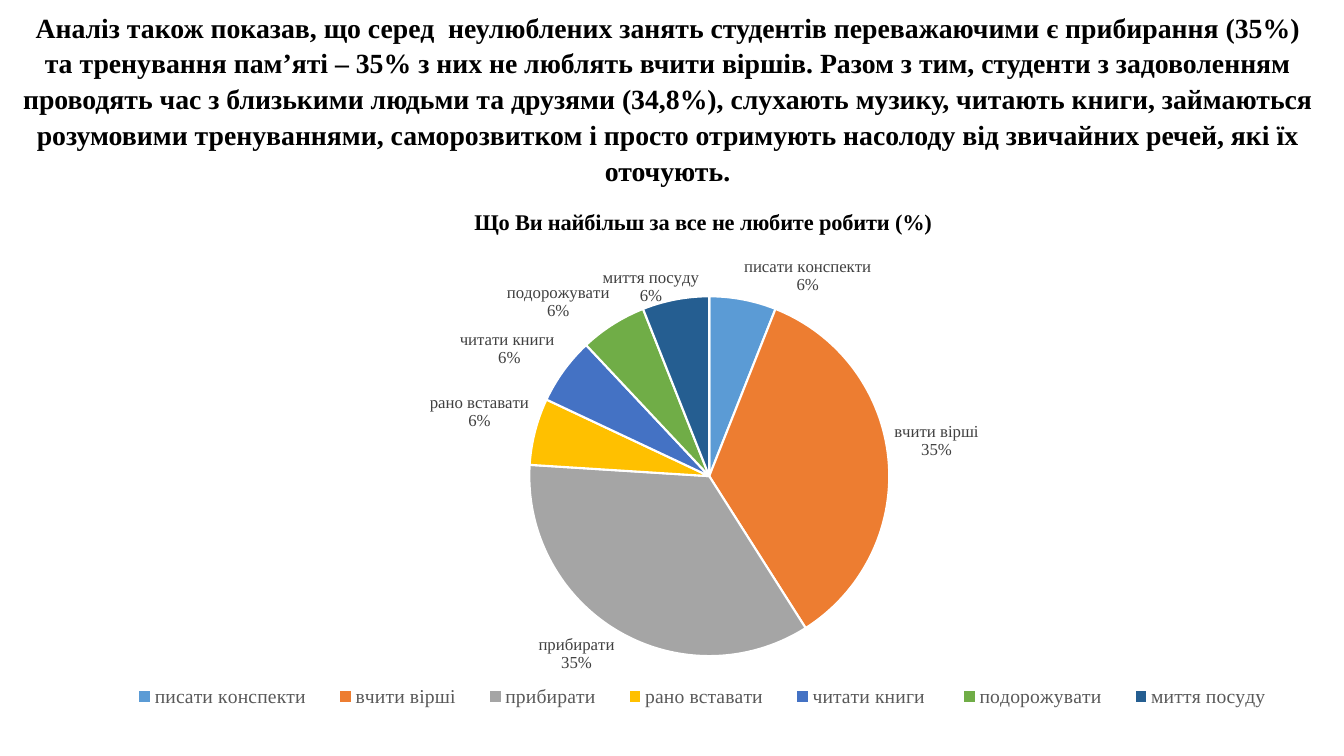
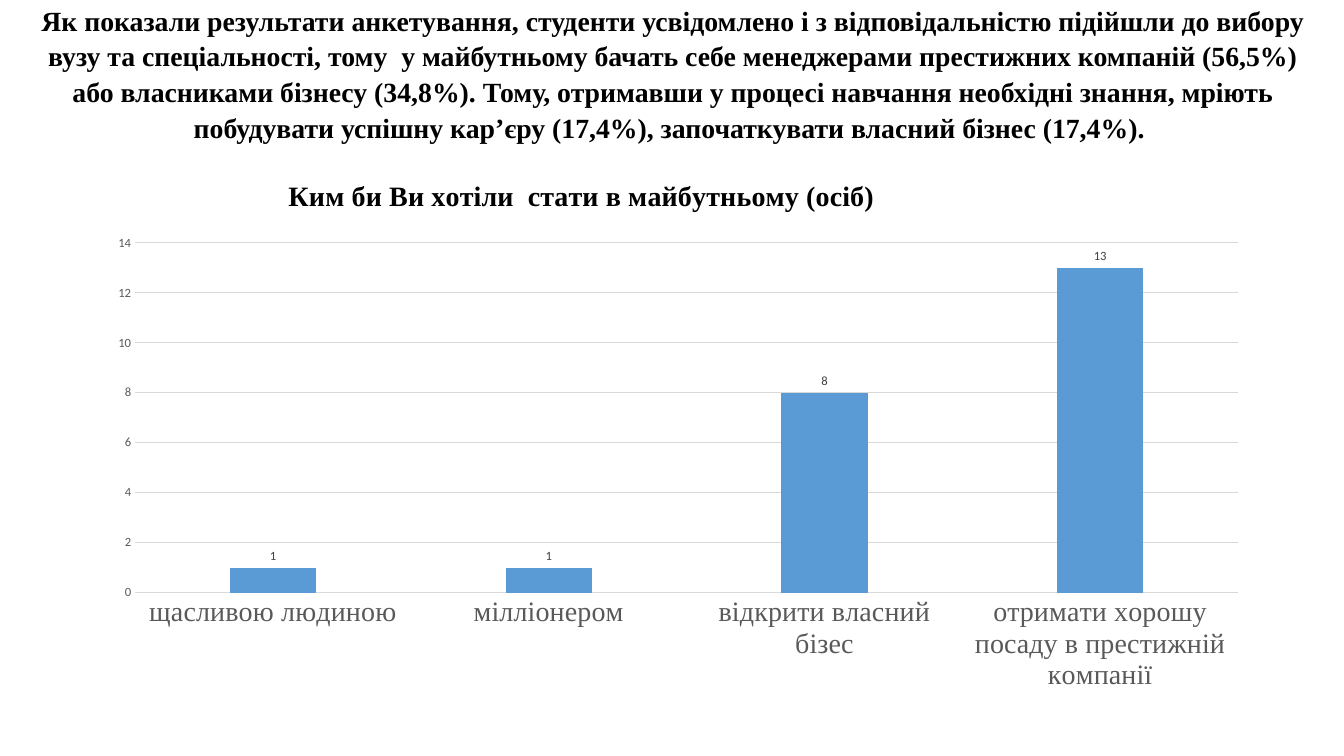
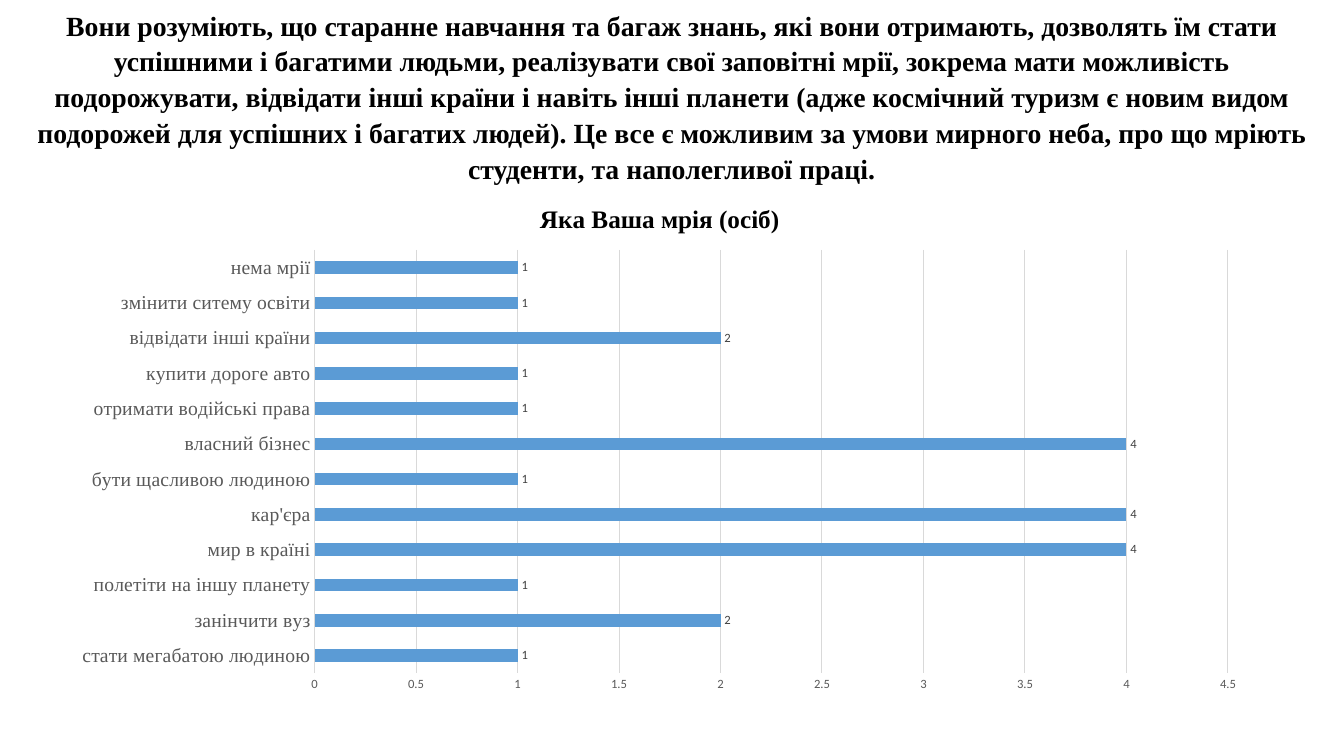
"""Build three survey slides, each a heading above one chart."""
from copy import deepcopy
from dataclasses import dataclass
from typing import Any, Optional

from lxml.etree import SubElement
from pptx import Presentation
from pptx.chart.chart import Chart
from pptx.chart.data import CategoryChartData
from pptx.dml.color import RGBColor
from pptx.enum.chart import XL_CHART_TYPE, XL_LABEL_POSITION, XL_LEGEND_POSITION, XL_TICK_MARK
from pptx.enum.text import MSO_ANCHOR, PP_ALIGN
from pptx.oxml.ns import qn
from pptx.slide import Slide
from pptx.util import Inches, Pt

Box = tuple[float, float, float, float]

SERIF, SANS = "Times New Roman", "Calibri"
BLACK = RGBColor(0x00, 0x00, 0x00)
WHITE = RGBColor(0xFF, 0xFF, 0xFF)
GREY = RGBColor(0x59, 0x59, 0x59)
DARK = RGBColor(0x40, 0x40, 0x40)
PALE = RGBColor(0xD9, 0xD9, 0xD9)
BLUE = RGBColor(0x5B, 0x9B, 0xD5)
SLICES = (BLUE, RGBColor(0xED, 0x7D, 0x31), RGBColor(0xA5, 0xA5, 0xA5),
          RGBColor(0xFF, 0xC0, 0x00), RGBColor(0x44, 0x72, 0xC4),
          RGBColor(0x70, 0xAD, 0x47), RGBColor(0x25, 0x5E, 0x91))

HEADING = {"name": SERIF, "size": Pt(19.8), "bold": True}
LEGEND = {"name": SERIF, "size": Pt(14)}
PIE_LABEL = {"name": SERIF, "size": Pt(12)}
SMALL = {"name": SANS, "size": Pt(9)}
PERCENT_LABELS = {"show_value": False, "show_category_name": True, "show_percentage": True,
                  "number_format": "0%", "number_format_is_linked": False,
                  "position": XL_LABEL_POSITION.OUTSIDE_END}
VALUE_LABELS = {"show_value": True, "position": XL_LABEL_POSITION.OUTSIDE_END}
TICKS = {"major_tick_mark": XL_TICK_MARK.NONE, "minor_tick_mark": XL_TICK_MARK.NONE}
LEGEND_BOX = (1.11, 6.71, 11.71, 0.4)
LAST_SLICE_SHIFT = (0.02, 0.02)


@dataclass(frozen=True)
class Survey:
    """One slide: its heading and its chart."""

    heading: str
    heading_at: tuple[float, float]
    kind: XL_CHART_TYPE
    box: Box
    plot: Box
    title: str
    title_size: int
    answers: dict[str, int]
    title_at: Optional[tuple[float, float]] = None
    category_size: int = 14
    gap: int = 0
    overlap: int = 0
    top: float = 0
    step: float = 0


SURVEYS = (
    Survey(
        "Аналіз також показав, що серед  неулюблених занять студентів переважаючими є "
        "прибирання (35%) та тренування пам’яті – 35% з них не люблять вчити віршів. Разом "
        "з тим, студенти з задоволенням проводять час з близькими людьми та друзями (34,8%), "
        "слухають музику, читають книги, займаються розумовими тренуваннями, саморозвитком і "
        "просто отримують насолоду від звичайних речей, які їх оточують.",
        (0.21, 0.08), XL_CHART_TYPE.PIE, (0.84, 1.86, 12.27, 5.43), (5.25, 2.94, 3.57, 3.57),
        "Що Ви найбільш за все не любите робити (%)", 16,
        {"писати конспекти": 6, "вчити вірші": 35, "прибирати": 35, "рано вставати": 6,
         "читати книги ": 6, "подорожувати": 6, "миття посуду": 6}),
    Survey(
        "Як показали результати анкетування, студенти усвідомлено і з відповідальністю "
        "підійшли до вибору вузу та спеціальності, тому  у майбутньому бачать себе менеджерами "
        "престижних компаній (56,5%) або власниками бізнесу (34,8%). Тому, отримавши у процесі "
        "навчання необхідні знання, мріють побудувати успішну кар’єру (17,4%), започаткувати "
        "власний бізнес (17,4%). ",
        (0.26, 0.01), XL_CHART_TYPE.COLUMN_CLUSTERED, (0.94, 1.66, 11.57, 5.3),
        (1.34, 2.41, 10.94, 3.47),
        "Ким би Ви хотіли  стати в майбутньому (осіб)", 20,
        {"щасливою людиною": 1, "мілліонером": 1, "відкрити власний бізес": 8,
         "отримати хорошу посаду в престижній компанії": 13},
        title_at=(2.81, 1.72), category_size=20, gap=219, overlap=-27, top=14, step=2),
    Survey(
        "Вони розуміють, що старанне навчання та багаж знань, які вони отримають, дозволять "
        "їм стати успішними і багатими людьми, реалізувати свої заповітні мрії, зокрема мати "
        "можливість подорожувати, відвідати інші країни і навіть інші планети (адже космічний "
        "туризм є новим видом подорожей для успішних і багатих людей). Це все є можливим за "
        "умови мирного неба, про що мріють студенти, та наполегливої праці.",
        (0.25, 0.06), XL_CHART_TYPE.BAR_CLUSTERED, (0.59, 1.85, 11.91, 5.12),
        (3.12, 2.48, 9.06, 4.2), "Яка Ваша мрія (осіб)", 18,
        {"стати мегабатою людиною": 1, "занінчити вуз": 2, "полетіти на іншу планету": 1,
         "мир в країні": 4, "кар'єра": 4, "бути щасливою людиною": 1, "власний бізнес": 4,
         "отримати водійські права": 1, "купити дороге авто": 1, "відвідати інші країни": 2,
         "змінити ситему освіти": 1, "нема мрії": 1},
        title_at=(5.31, 1.97), gap=182, top=4.5, step=0.5),
)


def apply(target: Any, values: dict[str, Any]) -> None:
    """Set each named attribute on the target."""
    for name, value in values.items():
        setattr(target, name, value)


def style(font: Any, values: dict[str, Any], color: RGBColor) -> None:
    """Format a font and colour it."""
    apply(font, values)
    font.color.rgb = color


def set_layout(parent: Any, index: int, values: dict[str, Any]) -> None:
    """Give a chart part a manual layout."""
    for old in parent.findall(qn("c:layout")):
        parent.remove(old)
    layout = SubElement(parent, qn("c:layout"))
    parent.insert(index, layout)
    manual = SubElement(layout, qn("c:manualLayout"))
    for name, value in values.items():
        SubElement(manual, qn(f"c:{name}")).set("val", str(value))


def fractions(box: tuple[float, ...], chart_box: Box) -> dict[str, Any]:
    """Turn slide inches into layout values relative to the chart."""
    left, top, width, height = chart_box
    values = {"xMode": "edge", "yMode": "edge",
              "x": (box[0] - left) / width, "y": (box[1] - top) / height}
    if len(box) == 4:
        values |= {"w": box[2] / width, "h": box[3] / height}
    return values


def add_heading(slide: Slide, survey: Survey) -> None:
    """Write the bold centred heading."""
    left, top = survey.heading_at
    sp = slide.shapes.add_textbox(Inches(left), Inches(top), Inches(12.82), Inches(1.78))
    tf = sp.text_frame
    apply(tf, {"word_wrap": True, "vertical_anchor": MSO_ANCHOR.TOP, "margin_left": 0,
               "margin_right": 0, "margin_top": 0, "margin_bottom": 0})
    p = tf.paragraphs[0]
    apply(p, {"alignment": PP_ALIGN.CENTER, "line_spacing": Pt(25.5)})
    r = p.add_run()
    r.text = survey.heading
    style(r.font, HEADING, BLACK)


def format_pie(chart: Chart, survey: Survey) -> None:
    """Colour the slices, label them and place the legend."""
    series = chart.plots[0].series[0]
    for i, color in enumerate(SLICES):
        fmt = series.points[i].format
        fmt.fill.solid()
        fmt.fill.fore_color.rgb = color
        fmt.line.color.rgb = WHITE
        fmt.line.width = Pt(1.5)
    labels = series.data_labels
    apply(labels, PERCENT_LABELS)
    style(labels.font, PIE_LABEL, DARK)
    group = series._element.find(qn("c:dLbls"))
    separator = SubElement(group, qn("c:separator"))
    separator.text = "\n"
    group.find(qn("c:showBubbleSize")).addnext(separator)
    parts = [deepcopy(el) for el in group if el.tag != qn("c:showLeaderLines")]
    last = SubElement(group, qn("c:dLbl"))
    group.insert(0, last)
    SubElement(last, qn("c:idx")).set("val", str(len(SLICES) - 1))
    set_layout(last, 1, dict(zip("xy", LAST_SLICE_SHIFT)))
    last.extend(parts)
    chart.has_legend = True
    apply(chart.legend, {"position": XL_LEGEND_POSITION.BOTTOM, "include_in_layout": False})
    style(chart.legend.font, LEGEND, GREY)
    set_layout(chart.legend._element, 1, fractions(LEGEND_BOX, survey.box))


def format_bars(chart: Chart, survey: Survey) -> None:
    """Colour the bars, label them and set both axes."""
    plot = chart.plots[0]
    apply(plot, {"gap_width": survey.gap, "overlap": survey.overlap})
    series = plot.series[0]
    series.format.fill.solid()
    series.format.fill.fore_color.rgb = BLUE
    apply(series.data_labels, VALUE_LABELS)
    style(series.data_labels.font, SMALL, DARK)
    cats, vals = chart.category_axis, chart.value_axis
    apply(cats, TICKS)
    apply(vals, TICKS | {"minimum_scale": 0, "maximum_scale": survey.top,
                         "major_unit": survey.step, "has_major_gridlines": True})
    style(cats.tick_labels.font, {"name": SERIF, "size": Pt(survey.category_size)}, GREY)
    style(vals.tick_labels.font, SMALL, GREY)
    apply(vals.tick_labels, {"number_format": "General", "number_format_is_linked": False})
    for line in (cats.format.line, vals.major_gridlines.format.line):
        line.color.rgb = PALE
        line.width = Pt(0.75)
    vals.format.line.fill.background()


def add_survey_chart(slide: Slide, survey: Survey) -> None:
    """Add the chart with its title and plot area in place."""
    data = CategoryChartData()
    data.categories = list(survey.answers)
    data.add_series("Series 1", list(survey.answers.values()))
    chart = slide.shapes.add_chart(survey.kind, *map(Inches, survey.box), data).chart
    style(chart.font, {"name": SANS, "size": Pt(10)}, BLACK)
    chart.has_legend = False
    chart.has_title = True
    p = chart.chart_title.text_frame.paragraphs[0]
    r = p.add_run()
    r.text = survey.title
    style(r.font, {"name": SERIF, "size": Pt(survey.title_size), "bold": True}, BLACK)
    if survey.title_at:
        set_layout(chart.chart_title._element, 1, fractions(survey.title_at, survey.box))
    is_pie = survey.kind == XL_CHART_TYPE.PIE
    chart.plots[0].vary_by_categories = is_pie
    plot_area = chart._chartSpace.chart.plotArea
    set_layout(plot_area, 0, {"layoutTarget": "inner"} | fractions(survey.plot, survey.box))
    (format_pie if is_pie else format_bars)(chart, survey)


def main() -> None:
    """Build and save the presentation."""
    prs = Presentation()
    prs.slide_width, prs.slide_height = Inches(13.33), Inches(7.5)
    for survey in SURVEYS:
        slide = prs.slides.add_slide(prs.slide_layouts[6])
        add_heading(slide, survey)
        add_survey_chart(slide, survey)
    prs.save("out.pptx")


if __name__ == "__main__":
    main()
